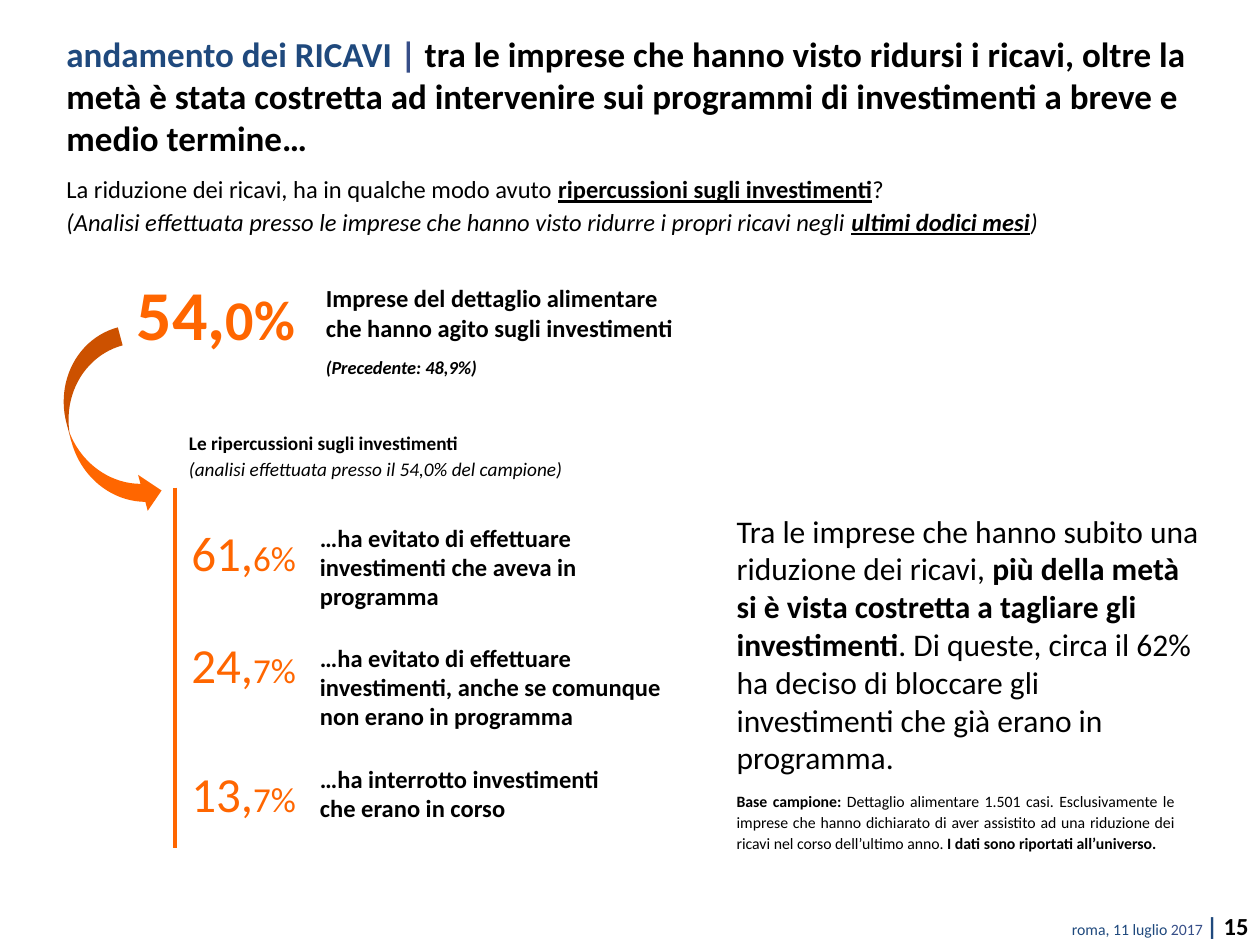
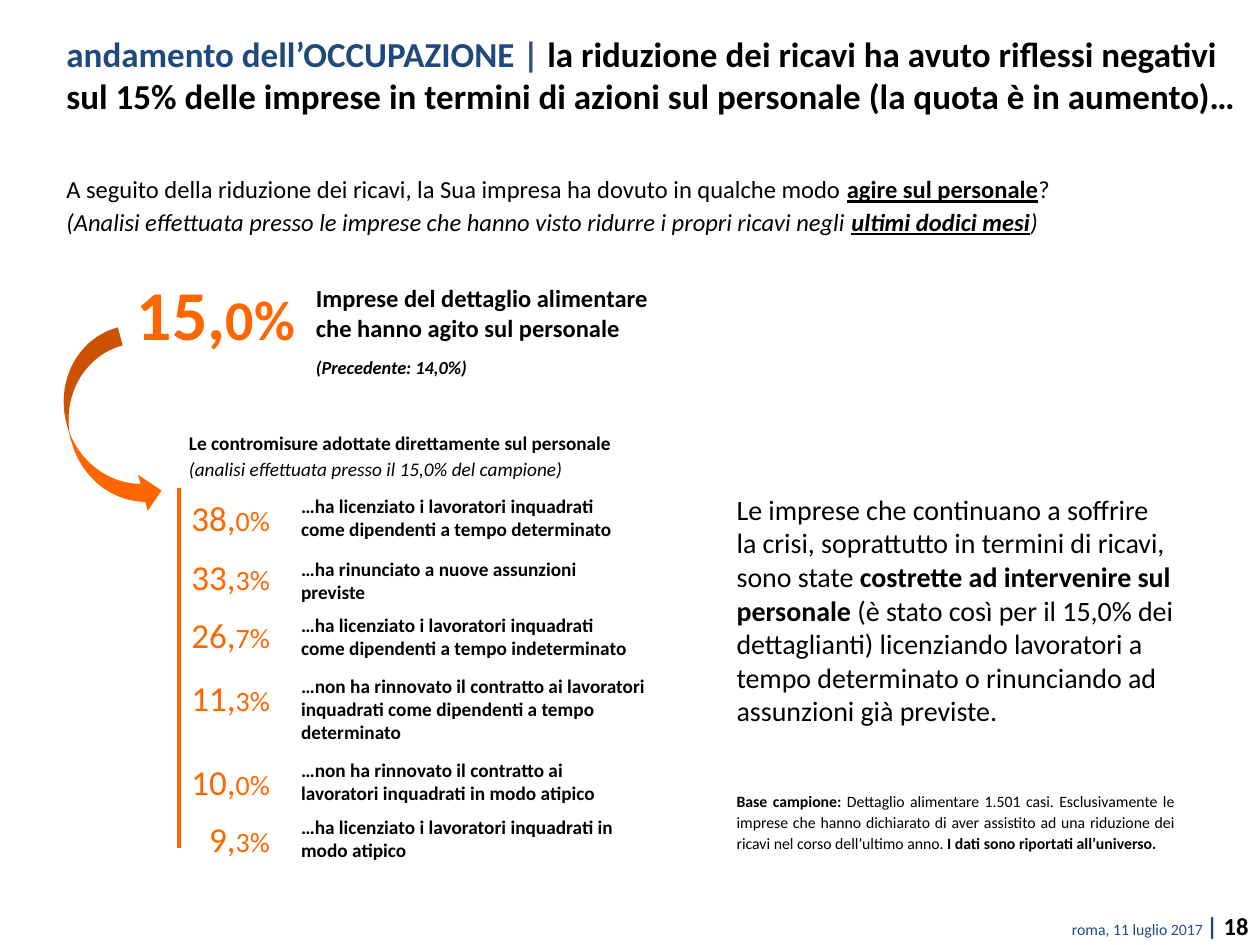
from pptx import Presentation
from pptx.dml.color import RGBColor
from pptx.enum.shapes import MSO_CONNECTOR as Link, MSO_SHAPE as Form
from pptx.enum.text import PP_ALIGN as Align
from pptx.oxml.ns import qn
from pptx.util import Cm, Pt
from lxml import etree

BLACK = RGBColor(0x00, 0x00, 0x00)
BLUE = RGBColor(0x1F, 0x49, 0x7D)
SLATE = RGBColor(0x36, 0x4E, 0x88)
ORANGE = RGBColor(0xFF, 0x66, 0x00)
LEFT, RIGHT = 1.09, 14.6
NUM_LEFT = 3.58
BAR_TOP, BAR_END = 9.83, 17.09

deck = Presentation()
deck.slide_width, deck.slide_height = Cm(25.4), Cm(19.05)


def write(slide, place, size, runs, color=BLACK, bold=None, italic=None,
          align=None, space=None, wrap=True):
    """Add a text box; a run is (text, marks, size, colour), marks from "biu".

    A bare string is a plain run, and "\\n" is a line break.
    """
    frame = slide.shapes.add_textbox(*map(Cm, place)).text_frame
    frame.word_wrap = wrap
    para = frame.paragraphs[0]
    para.alignment, para.line_spacing = align, space
    font = para.font
    font.name, font.size, font.color.rgb = "Calibri", Pt(size), color
    font.bold, font.italic = bold, italic
    for item in runs:
        if item == "\n":
            para.add_line_break()
            continue
        if isinstance(item, str):
            item = (item,)
        text, marks, pts, tint = item + ("", None, None)[len(item) - 1:]
        run = para.add_run()
        run.text = text
        if "b" in marks:
            run.font.bold = True
        if "i" in marks:
            run.font.italic = True
        if "u" in marks:
            run.font.underline = True
        if pts:
            run.font.size = Pt(pts)
        if tint:
            run.font.color.rgb = tint


pages = [
    dict(
        page="15",
        topic="andamento dei RICAVI",
        title="tra le imprese che hanno visto ridursi i ricavi, oltre la metà è stata "
              "costretta ad intervenire sui programmi di investimenti a breve e medio termine…",
        ask="La riduzione dei ricavi, ha in qualche modo avuto ",
        key="ripercussioni sugli investimenti",
        share=("54,", "0%"), share_left=6.32,
        claim="Imprese del dettaglio alimentare che hanno agito sugli investimenti",
        before="(Precedente: 48,9%)",
        head="Le ripercussioni sugli investimenti",
        basis="(analisi effettuata presso il 54,0% del campione)",
        bar=3.53, num_width=2.64, num_height=1.45, sizes=(28, 20, 14), label_left=6.2,
        # number top, label top, label width, label height, value, label
        items=[
            (10.41, 10.41, 6.93, 2.06, ("61,", "6%"),
             "…ha evitato di effettuare investimenti che aveva in programma"),
            (12.67, 12.83, 7.54, 2.06, ("24,", "7%"),
             "…ha evitato di effettuare investimenti, anche se comunque non erano in programma"),
            (15.27, 15.27, 6.93, 1.45, ("13,", "7%"),
             "…ha interrotto investimenti che erano in corso"),
        ],
        note_place=(RIGHT, 10.19, 9.86, 5.64), note_size=18,
        note=["Tra le imprese che hanno subito una riduzione dei ricavi, ",
              ("più della metà si è vista costretta a tagliare gli investimenti", "b"),
              ". Di queste, circa il 62% ha deciso di bloccare gli investimenti "
              "che già erano in programma."],
    ),
    dict(
        page="18",
        topic="andamento dell’OCCUPAZIONE",
        title="la riduzione dei ricavi ha avuto riflessi negativi sul 15% delle imprese "
              "in termini di azioni sul personale (la quota è in aumento)…",
        ask="A seguito della riduzione dei ricavi, la Sua impresa ha dovuto in qualche modo ",
        key="agire sul personale",
        share=("15,", "0%"), share_left=6.12,
        claim="Imprese del dettaglio alimentare che hanno agito sul personale",
        before="(Precedente: 14,0%)",
        head="Le contromisure adottate direttamente sul personale",
        basis="(analisi effettuata presso il 15,0% del campione)",
        bar=3.61, num_width=2.11, num_height=1.12, sizes=(20, 16, 11), label_left=5.82,
        items=[
            (9.88, 9.83, 6.93, 1.19, ("38,", "0%"),
             "…ha licenziato i lavoratori inquadrati come dipendenti a tempo determinato"),
            (11.07, 11.1, 6.93, 1.19, ("33,", "3%"),
             "…ha rinunciato a nuove assunzioni previste"),
            (12.24, 12.24, 7.29, 1.19, ("26,", "7%"),
             "…ha licenziato i lavoratori inquadrati come dipendenti a tempo indeterminato"),
            (13.51, 13.46, 7.7, 1.68, ("11,", "3%"),
             "…non ha rinnovato il contratto ai lavoratori inquadrati come dipendenti "
             "a tempo determinato"),
            (15.21, 15.16, 6.93, 1.19, ("10,", "0%"),
             "…non ha rinnovato il contratto ai lavoratori inquadrati in modo atipico"),
            (16.36, 16.31, 6.93, 1.19, ("9,", "3%"),
             "…ha licenziato i lavoratori inquadrati in modo atipico"),
        ],
        note_place=(RIGHT, 9.8, 9.32, 5.05), note_size=16,
        note=["Le imprese che continuano a soffrire la crisi, soprattutto in termini "
              "di ricavi, sono state ",
              ("costrette ad intervenire sul personale", "b"),
              " (è stato così per il 15,0% dei dettaglianti) licenziando lavoratori a tempo "
              "determinato o rinunciando ad assunzioni già previste."],
    ),
]

for data in pages:
    slide = deck.slides.add_slide(deck.slide_layouts[6])

    # Footer, title and question
    write(slide, (7.82, 18.24, 17.6, 0.84), 9,
          ["roma, 11 luglio", (" 2017 ", "", None, SLATE), ("| ", "b", 14),
           (data["page"], "b", 14, BLACK)], BLUE, align=Align.RIGHT)
    write(slide, (LEFT, 0.53, 24.31, 2.13), 20,
          [(data["topic"], "", None, BLUE), (" | ", "", None, SLATE), data["title"]],
          bold=True)
    write(slide, (LEFT, 3.33, 21, 1.57), 14,
          [data["ask"], (data["key"], "bu"), "?", "\n",
           ("(Analisi effettuata presso le imprese che hanno visto ridurre "
            "i propri ricavi negli ", "i"),
           ("ultimi dodici mesi", "biu"), (")", "i")], space=1.1)

    # Main share and its breakdown heading
    whole, part = data["share"]
    write(slide, (2.51, 5.33, 3.71, 1.96), 40, [whole, (part, "", 32)],
          ORANGE, bold=True, wrap=False)
    write(slide, (data["share_left"], 5.59, 7.77, 1.45), 14, [data["claim"]], bold=True)
    write(slide, (data["share_left"], 7.06, 4.8, 0.74), 10.5, [data["before"]],
          bold=True, italic=True)
    write(slide, (3.56, 8.53, 9.14, 1.3), 11,
          [(data["head"], "b"), "\n", (data["basis"], "i")], space=1.1)

    arrow = slide.shapes.add_shape(Form.CURVED_UP_ARROW,
                                   Cm(0.25), Cm(7.87), Cm(3.78), Cm(1.5))
    arrow.rotation = 75
    arrow.shadow.inherit = False
    arrow.fill.solid()
    arrow.fill.fore_color.rgb = ORANGE
    arrow.line.fill.background()

    bar = slide.shapes.add_connector(Link.STRAIGHT, Cm(data["bar"]), Cm(BAR_TOP),
                                     Cm(data["bar"]), Cm(BAR_END))
    bar.line.color.rgb, bar.line.width = ORANGE, Pt(2.25)
    etree.SubElement(bar._element.spPr, qn("a:effectLst"))

    # Breakdown rows
    big, small, label_size = data["sizes"]
    for num_top, top, width, height, (whole, part), label in data["items"]:
        write(slide, (NUM_LEFT, num_top, data["num_width"], data["num_height"]), big,
              [whole, (part, "", small)], ORANGE, align=Align.RIGHT, wrap=False)
        write(slide, (data["label_left"], top, width, height), label_size,
              [label], bold=True)

    # Comment and sample base
    write(slide, data["note_place"], data["note_size"], data["note"])
    write(slide, (RIGHT, 15.8, 9.32, 1.52), 9,
          [("Base campione: ", "b"),
           "Dettaglio alimentare 1.501 casi. Esclusivamente le imprese che hanno dichiarato "
           "di aver assistito ad una riduzione dei ricavi nel corso dell’ultimo anno. ",
           ("I dati sono riportati all’universo.", "b")], align=Align.JUSTIFY, space=1.1)

deck.save("out.pptx")
